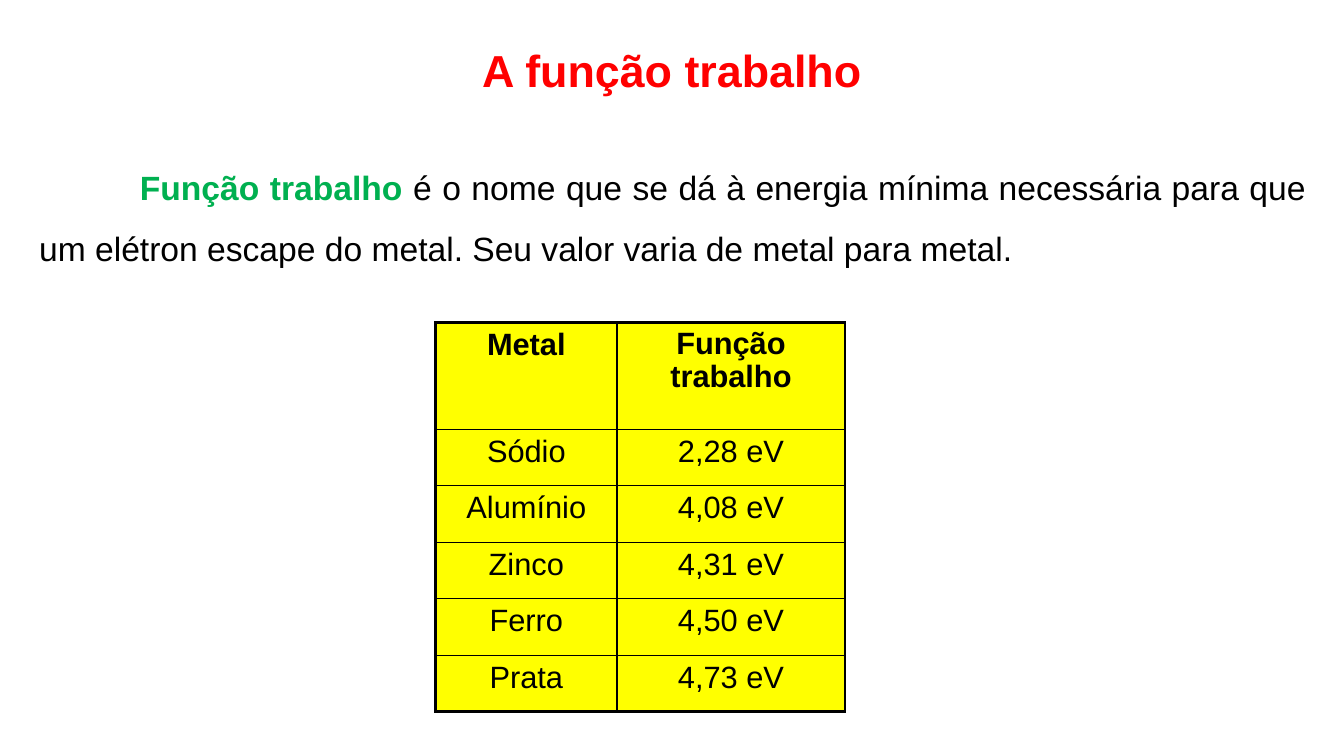
from dataclasses import dataclass

from lxml.etree import SubElement
from pptx import Presentation
from pptx.dml.color import RGBColor
from pptx.enum.text import MSO_ANCHOR as Anchor, PP_ALIGN as Align
from pptx.oxml.ns import qn
from pptx.util import Inches, Pt

BLACK, RED, GREEN, YELLOW = "000000", "FF0000", "00B050", "FFFF00"
THIN, THICK = 1, 2.25


@dataclass
class TextRun:
    text: str
    size: float
    color: str = BLACK
    bold: bool = False


@dataclass
class TextBlock:
    box: tuple[float, float, float, float]
    runs: list[TextRun]
    frame_format: dict
    paragraph_format: dict
    first_line_indent: float = 0


def rgb(color: str) -> RGBColor:
    return RGBColor.from_string(color)


def apply(target, values: dict) -> None:
    for name, value in values.items():
        setattr(target, name, value)


def write_run(paragraph, text_run: TextRun) -> None:
    run = paragraph.add_run()
    run.text = text_run.text
    apply(run.font, {"name": "Arial", "size": Pt(text_run.size), "bold": text_run.bold})
    run.font.color.rgb = rgb(text_run.color)


def draw_text(slide, block: TextBlock) -> None:
    frame = slide.shapes.add_textbox(*map(Inches, block.box)).text_frame
    apply(frame, {"word_wrap": True} | block.frame_format)
    paragraph = frame.paragraphs[0]
    apply(paragraph, block.paragraph_format)
    if block.first_line_indent:
        properties = paragraph._p.get_or_add_pPr()
        properties.set("indent", str(Inches(block.first_line_indent)))
    for text_run in block.runs:
        write_run(paragraph, text_run)


def set_borders(cell, widths: dict[str, float]) -> None:
    properties = cell._tc.get_or_add_tcPr()
    # Border lines come before the fill
    for position, (side, width) in enumerate(widths.items()):
        line = SubElement(properties, qn(f"a:ln{side}"), w=str(Pt(width)))
        fill = SubElement(line, qn("a:solidFill"))
        SubElement(fill, qn("a:srgbClr"), val=BLACK)
        properties.insert(position, line)


def draw_table(slide, rows: list[tuple[str, str]]) -> None:
    column_widths = [1.8, 2.26]
    row_heights = [1.06] + [0.56] * (len(rows) - 1)
    last_row, last_column = len(rows) - 1, len(column_widths) - 1
    box = (4.32, 3.2, sum(column_widths), sum(row_heights))
    frame = slide.shapes.add_table(len(rows), len(column_widths), *map(Inches, box))
    table = frame.table
    for column, width in zip(table.columns, column_widths):
        column.width = Inches(width)
    for row, height in zip(table.rows, row_heights):
        row.height = Inches(height)

    for i, texts in enumerate(rows):
        for j, text in enumerate(texts):
            cell = table.cell(i, j)
            cell.fill.solid()
            cell.fill.fore_color.rgb = rgb(YELLOW)
            paragraph = cell.text_frame.paragraphs[0]
            paragraph.alignment = Align.CENTER
            if (i, j) == (0, last_column):
                paragraph.line_spacing = 0.96
            write_run(paragraph, TextRun(text, 22, bold=i == 0))
            outer = {"L": j == 0, "R": j == last_column, "T": i == 0, "B": i == last_row}
            set_borders(cell, {side: THICK if edge else THIN for side, edge in outer.items()})


TITLE = TextBlock(
    (0, 0.26, 13.33, 0.7),
    [TextRun("A função trabalho", 32, RED, True)],
    {"vertical_anchor": Anchor.BOTTOM, "margin_left": 0, "margin_right": 0, "margin_bottom": 0},
    {"alignment": Align.CENTER},
)
DEFINITION = TextBlock(
    (0.29, 1.41, 12.76, 1.25),
    [
        TextRun("Função trabalho ", 24, GREEN, True),
        TextRun("é o nome que se dá à energia mínima necessária para que um elétron "
                "escape do metal. Seu valor varia de metal para metal.", 24),
    ],
    {},
    {"alignment": Align.JUSTIFY, "line_spacing": 1.5},
    first_line_indent=1,
)
WORK_FUNCTIONS = [
    ("Metal", "Função trabalho"),
    ("Sódio", "2,28 eV"),
    ("Alumínio", "4,08 eV"),
    ("Zinco", "4,31 eV"),
    ("Ferro", "4,50 eV"),
    ("Prata", "4,73 eV"),
]


def main() -> None:
    presentation = Presentation()
    apply(presentation, {"slide_width": Inches(13.33), "slide_height": Inches(7.5)})
    slide = presentation.slides.add_slide(presentation.slide_layouts[6])
    draw_table(slide, WORK_FUNCTIONS)
    for block in (TITLE, DEFINITION):
        draw_text(slide, block)
    presentation.save("out.pptx")


if __name__ == "__main__":
    main()
